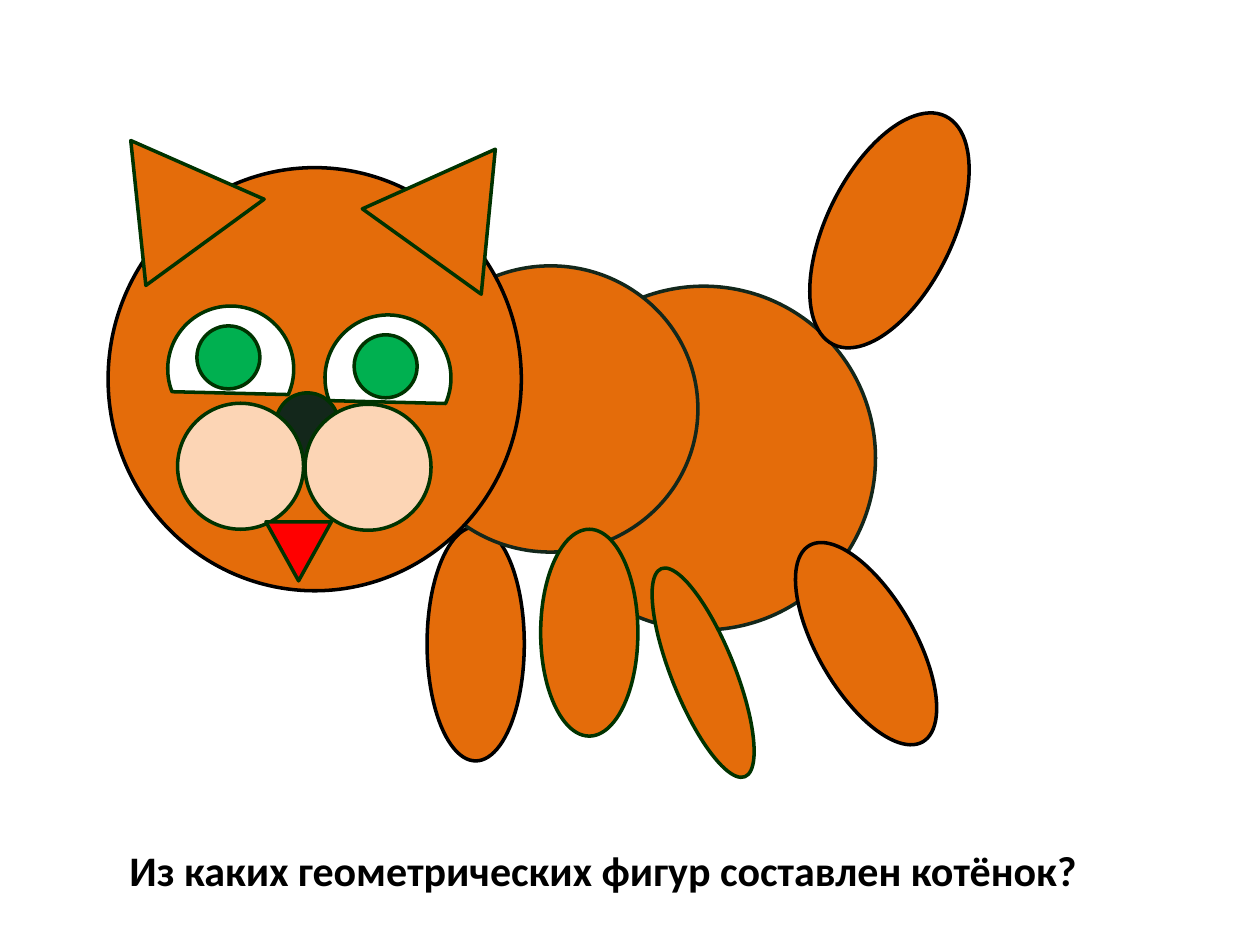
from pptx import Presentation
from pptx.dml.color import RGBColor as RGB
from pptx.enum.shapes import MSO_SHAPE as SHAPE
from pptx.enum.text import MSO_AUTO_SIZE as FIT
from pptx.util import Cm, Pt

COLORS = {
    "fur": "E46C0A",
    "black": "000000",
    "dark": "13271B",
    "green": "003300",
    "white": "FFFFFF",
    "cheek": "FCD5B5",
    "mouth": "FF0000",
    "iris": "00B050",
}


class Kitten:
    line_width = Pt(2)
    caption_font = {"name": "Calibri", "size": Pt(24), "bold": True}

    def __init__(self, slide):
        self.slide = slide

    def figure(self, kind, box, fill="fur", line="green", rotation=0):
        s = self.slide.shapes.add_shape(kind, *map(Cm, box))
        s.rotation = rotation
        s.shadow.inherit = False
        s.fill.solid()
        s.fill.fore_color.rgb = RGB.from_string(COLORS[fill])
        s.line.color.rgb = RGB.from_string(COLORS[line])
        s.line.width = self.line_width

    def oval(self, box, **style):
        self.figure(SHAPE.OVAL, box, **style)

    def ear(self, left, top, rotation):
        self.figure(SHAPE.ISOSCELES_TRIANGLE, (left, top, 2.95, 2.54), rotation=rotation)

    def eye(self, left, top):
        self.figure(SHAPE.CHORD, (left, top, 2.54, 2.54), fill="white", rotation=113.9)

    def dot(self, left, top, fill):
        self.figure(SHAPE.FLOWCHART_CONNECTOR, (left, top, 1.27, 1.27), fill=fill)

    def cheek(self, left, top):
        self.oval((left, top, 2.54, 2.54), fill="cheek")

    def caption(self, box, text):
        tf = self.slide.shapes.add_textbox(*map(Cm, box)).text_frame
        for name, value in {"word_wrap": True, "auto_size": FIT.SHAPE_TO_FIT_TEXT,
                            "margin_left": Cm(0.43)}.items():
            setattr(tf, name, value)
        r = tf.paragraphs[0].add_run()
        r.text = text
        for name, value in self.caption_font.items():
            setattr(r.font, name, value)
        r.font.color.rgb = RGB.from_string(COLORS["black"])


def main():
    prs = Presentation()
    prs.slide_width, prs.slide_height = Cm(25.4), Cm(19.05)
    kitten = Kitten(prs.slides.add_slide(prs.slide_layouts[6]))

    body_parts = [
        ((10.72, 5.77, 6.93, 6.93), "dark", 0),
        ((16.48, 10.69, 1.96, 4.57), "black", 330),
        ((16.66, 2.08, 2.54, 5.13), "black", 26.2),
        ((13.54, 11.3, 1.27, 4.52), "green", 338.1),
        ((8.61, 10.62, 1.96, 4.72), "black", 0),
        ((8.13, 5.36, 5.94, 5.77), "dark", 0),
        ((2.18, 3.38, 8.33, 8.53), "black", 0),
        ((10.9, 10.67, 1.96, 4.17), "green", 0),
    ]
    for box, line, rotation in body_parts:
        kitten.oval(box, line=line, rotation=rotation)

    kitten.ear(1.91, 2.59, 323.9)
    kitten.ear(7.77, 2.77, 35.7)

    eyes = [(3.38, 6.17), (6.55, 6.35)]
    for left, top in eyes:
        kitten.eye(left, top)
    kitten.dot(5.56, 7.92, "dark")
    kitten.cheek(6.15, 8.15)
    kitten.cheek(3.58, 8.13)
    kitten.figure(SHAPE.FLOWCHART_MERGE, (5.36, 10.52, 1.32, 1.19), fill="mouth")
    for left, top in eyes:
        kitten.dot(left + 0.59, top + 0.4, "iris")

    kitten.caption((2.18, 16.89, 22.99, 1.27),
                   "Из каких геометрических фигур составлен котёнок?")
    prs.save("out.pptx")


if __name__ == "__main__":
    main()
